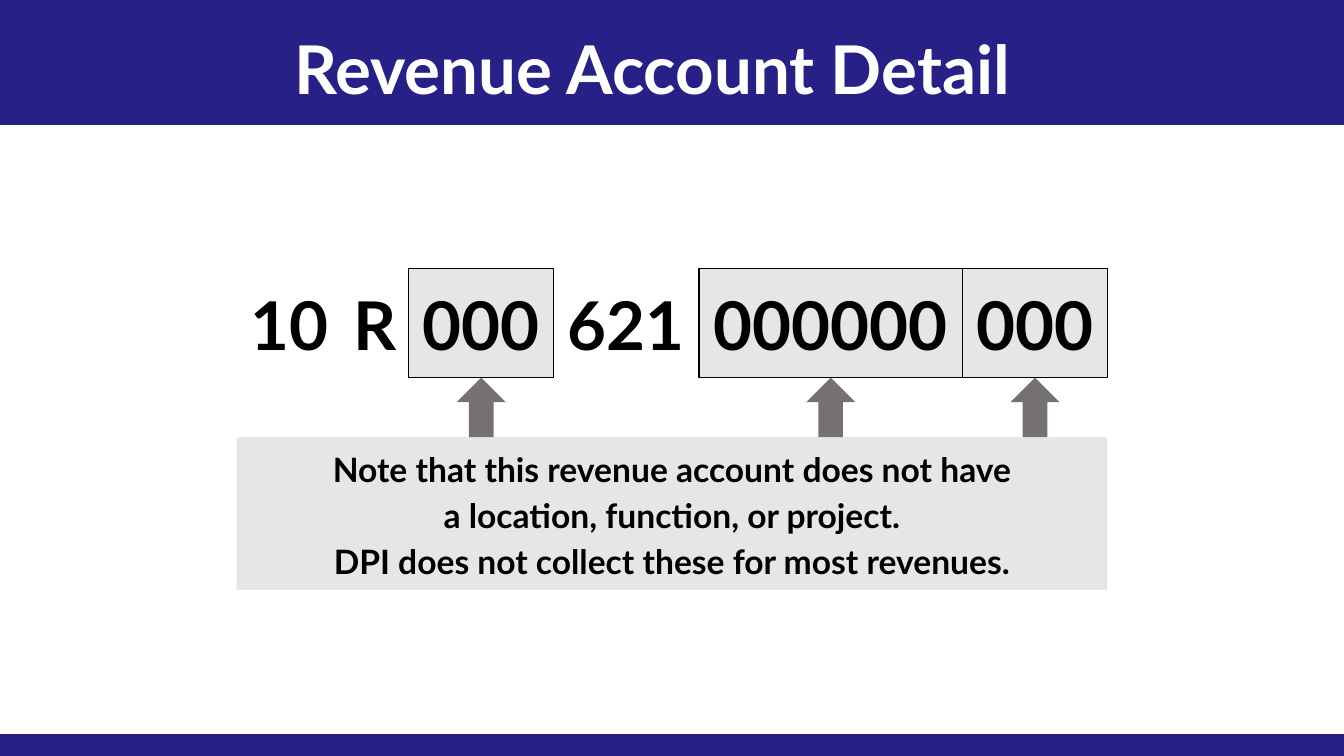
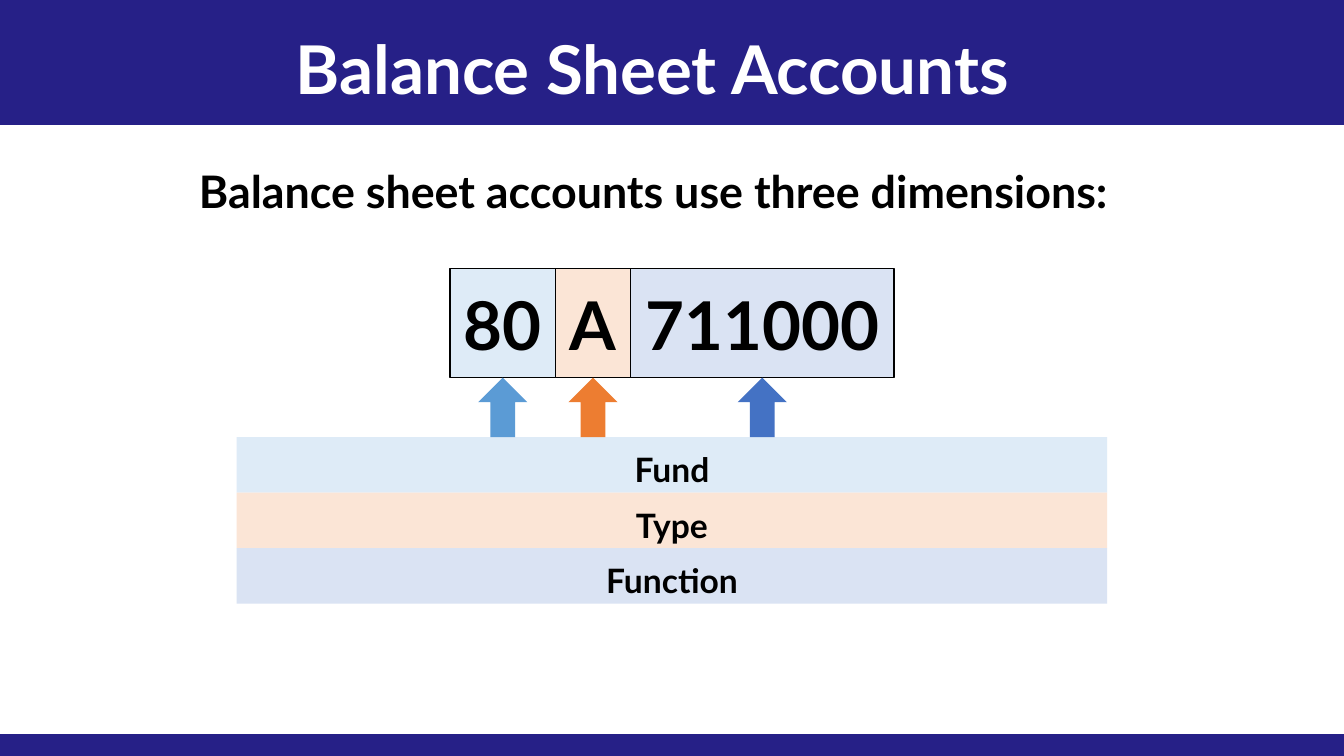
from dataclasses import dataclass

from pptx import Presentation
from pptx.dml.color import RGBColor
from pptx.enum import shapes, text
from pptx.util import Pt


@dataclass(frozen=True)
class Theme:
    font: str = "Lato"
    navy: str = "262087"
    white: str = "FFFFFF"
    black: str = "000000"
    gray: str = "E7E6E6"
    dark: str = "767171"
    sky: str = "DEEBF7"
    blue: str = "5B9BD5"
    peach: str = "FBE5D6"
    orange: str = "ED7D31"
    ice: str = "DAE3F3"
    royal: str = "4472C4"
    big: int = 36
    mid: int = 24
    small: int = 18


T = Theme()
WIDE, HIGH = 720, 405
RECT, ARROW = shapes.MSO_SHAPE.RECTANGLE, shapes.MSO_SHAPE.UP_ARROW


def draw(slide, kind, at, fill, line=None, weight=0.75):
    shape = slide.shapes.add_shape(kind, *map(Pt, at))
    shape.shadow.inherit = False
    shape.fill.solid()
    shape.fill.fore_color.rgb = RGBColor.from_string(fill)
    if line:
        shape.line.color.rgb = RGBColor.from_string(line)
        shape.line.width = Pt(weight)
    else:
        shape.line.fill.background()
    return shape


def write(shape, words, size, color=T.black, wrap=True, middle=False, space=None):
    frame = shape.text_frame
    frame.text = words
    frame.word_wrap = wrap
    frame.auto_size = text.MSO_AUTO_SIZE.NONE
    anchor = text.MSO_ANCHOR
    frame.vertical_anchor = anchor.MIDDLE if middle else anchor.TOP
    for para in frame.paragraphs:
        para.alignment = text.PP_ALIGN.CENTER
        para.line_spacing = space
        para.font.name = T.font
        para.font.size = Pt(size)
        para.font.bold = True
        para.font.color.rgb = RGBColor.from_string(color)


# Account parts: text, width, fill, arrow colour; notes: text, height, fill
pages = [
    dict(
        title="Revenue Account Detail",
        lead=None,
        parts=[
            ("10", 56.6, None, None),
            ("R", 35.7, None, None),
            ("000", 77.7, T.gray, T.dark),
            ("621", 77.7, None, None),
            ("000000", 141.2, T.gray, T.dark),
            ("000", 77.7, T.gray, T.dark),
        ],
        notes=[
            ("Note that this revenue account does not have\v"
             "a location, function, or project.\n"
             "DPI does not collect these for most revenues.", 81.8, T.gray),
        ],
    ),
    dict(
        title="Balance Sheet Accounts",
        lead="Balance sheet accounts use three dimensions:",
        parts=[
            ("80", 56.6, T.sky, T.blue),
            ("A", 40.2, T.peach, T.orange),
            ("711000", 141.2, T.ice, T.royal),
        ],
        notes=[
            ("Fund", 29.75, T.sky),
            ("Type", 29.75, T.peach),
            ("Function", 29.75, T.ice),
        ],
    ),
]

deck = Presentation()
deck.slide_width, deck.slide_height = Pt(WIDE), Pt(HIGH)
layout = deck.slide_layouts[5]

# Shared title place
head = layout.placeholders[0]
head.left, head.top, head.width, head.height = map(Pt, (114.5, 10.8, 470, 51))

slides = [deck.slides.add_slide(layout) for page in pages]

# Shared bands, moved to the layout behind its placeholders
for top, tall in ((0, 66.3), (394, 11)):
    band = draw(slides[0], RECT, (0, top, WIDE, tall), T.navy, T.navy, 1)
    layout.shapes.element.insert(2, band.element)

# Common grid
row, cell = 144, 58.3
base = 234.2
wide = 466.4
tip, shaft = 26.4, base - row - cell

for slide, page in zip(slides, pages):
    write(slide.shapes.title, page["title"], T.big, T.white)

    if page["lead"]:
        lead = slide.shapes.add_textbox(Pt(96.5), Pt(84.2), Pt(507), Pt(36))
        write(lead, page["lead"], T.mid, wrap=False)

    # Notes stacked below the account
    y = base
    for words, tall, fill in page["notes"]:
        note = draw(slide, RECT, ((WIDE - wide) / 2, y, wide, tall), fill)
        write(note, words, T.small, space=1.14)
        y += tall

    # Account number, centred, with an arrow under each marked part
    x = (WIDE - sum(part[1] for part in page["parts"])) / 2
    for words, width, fill, color in page["parts"]:
        at = (x, row, width, cell)
        if fill:
            box = draw(slide, RECT, at, fill, T.black)
            mid = x + width / 2
            draw(slide, ARROW, (mid - tip / 2, row + cell, tip, shaft), color)
        else:
            box = slide.shapes.add_textbox(*map(Pt, at))
        write(box, words, T.big, wrap=False, middle=True)
        x += width

deck.save("out.pptx")
